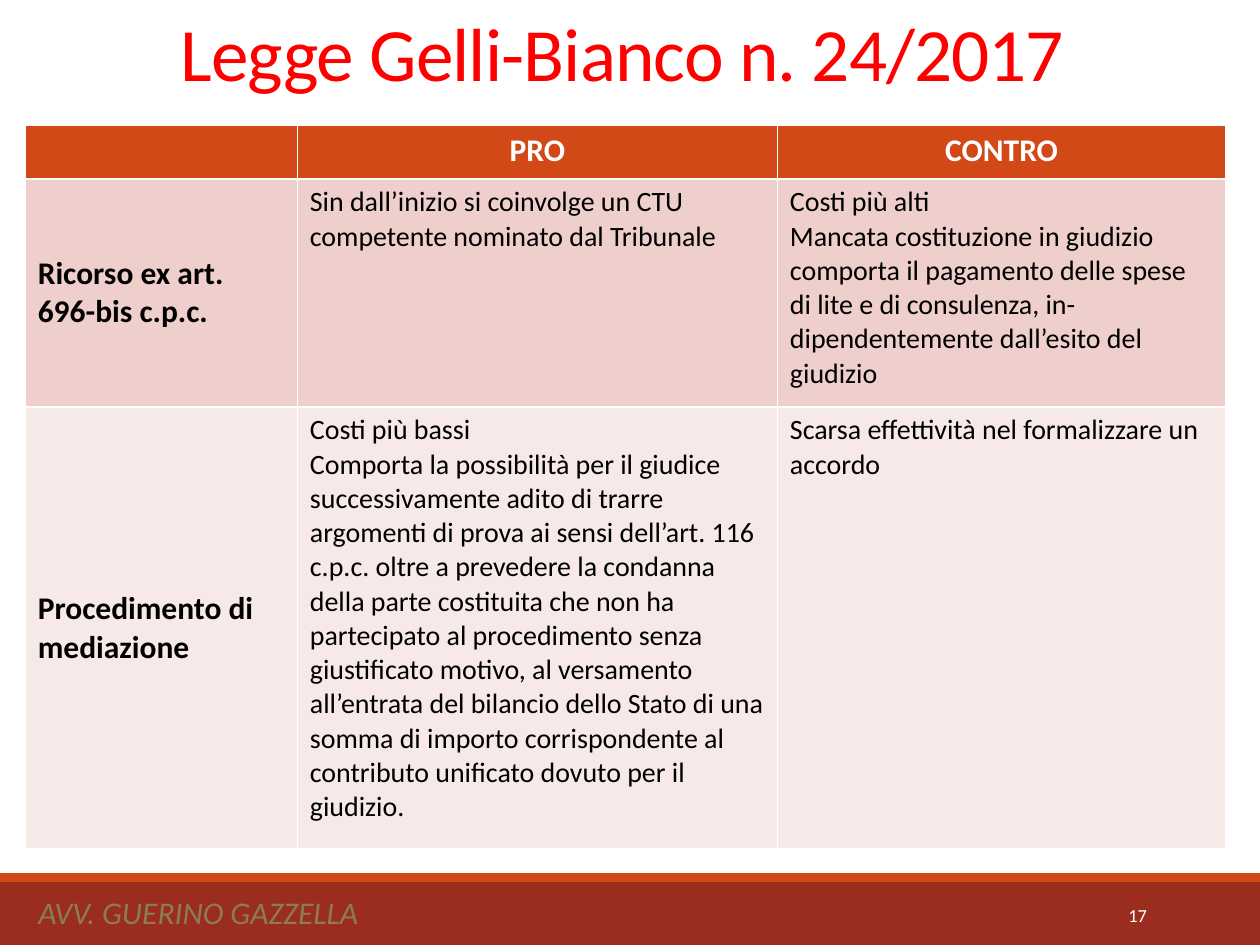
from pptx import Presentation
from pptx.dml.color import RGBColor
from pptx.enum.shapes import MSO_SHAPE
from pptx.enum.text import MSO_ANCHOR, MSO_AUTO_SIZE, PP_ALIGN
from pptx.util import Inches, Pt

RED = RGBColor(0xFF, 0x00, 0x00)
ORANGE = RGBColor(0xD3, 0x48, 0x17)
BRICK = RGBColor(0x9B, 0x2D, 0x1F)
ROSE = RGBColor(0xEF, 0xCF, 0xCC)
PALE = RGBColor(0xF7, 0xE9, 0xE8)
TAUPE = RGBColor(0x8B, 0x7B, 0x57)
WHITE = RGBColor(0xFF, 0xFF, 0xFF)
BLACK = RGBColor(0x00, 0x00, 0x00)

TITLE = "Legge Gelli-Bianco n. 24/2017"
ROWS = [
    ["", "PRO", "CONTRO"],
    ["Ricorso ex art. 696-bis c.p.c.",
     "Sin dall’inizio si coinvolge un CTU competente nominato dal Tribunale",
     "Costi più alti\n"
     "Mancata costituzione in giudizio comporta il pagamento delle spese di lite "
     "e di consulenza, in-dipendentemente dall’esito del giudizio"],
    ["Procedimento di mediazione",
     "Costi più bassi\n"
     "Comporta la possibilità per il giudice successivamente adito di trarre "
     "argomenti di prova ai sensi dell’art. 116 c.p.c. oltre a prevedere la "
     "condanna della parte costituita che non ha partecipato al procedimento "
     "senza giustificato motivo, al versamento all’entrata del bilancio dello "
     "Stato di una somma di importo corrispondente al contributo unificato "
     "dovuto per il giudizio.",
     "Scarsa effettività nel formalizzare un accordo"],
]
COL_WIDTHS = [2.16, 3.81, 3.56]
ROW_HEIGHTS = [0.43, 1.81, 3.51]
ROW_FILLS = [ORANGE, ROSE, PALE]
BANDS = [(7, 0.5, BRICK), (6.93, 0.07, ORANGE)]
FOOTER = [
    ("AVV. GUERINO GAZZELLA", (-0.01, 6.98, 3.17, 0.52), PP_ALIGN.CENTER, 18, TAUPE, True),
    ("17", (8.12, 7.06, 1.08, 0.4), PP_ALIGN.RIGHT, 10.5, WHITE, False),
]


def style(tf, size, color, align=PP_ALIGN.LEFT, bold=False, italic=False):
    for p in tf.paragraphs:
        p.alignment = align
        for r in p.runs:
            r.font.name = "Calibri"
            r.font.size = Pt(size)
            r.font.color.rgb = color
            r.font.bold = bold
            r.font.italic = italic


prs = Presentation()
prs.slide_width, prs.slide_height = Inches(10), Inches(7.5)
slide = prs.slides.add_slide(prs.slide_layouts[5])

for top, height, color in BANDS:
    sp = slide.shapes.add_shape(MSO_SHAPE.RECTANGLE, 0, Inches(top), prs.slide_width, Inches(height))
    sp.shadow.inherit = False
    sp.fill.solid()
    sp.fill.fore_color.rgb = color
    sp.line.fill.background()

title = slide.shapes.title
title.left, title.top, title.width, title.height = map(Inches, (0.84, 0.21, 8.2, 0.61))
tf = title.text_frame
tf.text = TITLE
tf.auto_size = MSO_AUTO_SIZE.NONE
tf.vertical_anchor = MSO_ANCHOR.BOTTOM
style(tf, 43, RED, PP_ALIGN.CENTER)
tf.paragraphs[0].line_spacing = 0.85
tf.paragraphs[0].runs[0].font._element.set("spc", "-50")

for text, box, align, size, color, italic in FOOTER:
    tf = slide.shapes.add_textbox(*map(Inches, box)).text_frame
    tf.word_wrap = True
    tf.vertical_anchor = MSO_ANCHOR.MIDDLE
    tf.text = text
    style(tf, size, color, align, italic=italic)

table = slide.shapes.add_table(
    len(ROWS), len(COL_WIDTHS), Inches(0.2), Inches(0.99),
    Inches(sum(COL_WIDTHS)), Inches(sum(ROW_HEIGHTS))).table
for col, width in zip(table.columns, COL_WIDTHS):
    col.width = Inches(width)
for i, (row, height) in enumerate(zip(table.rows, ROW_HEIGHTS)):
    row.height = Inches(height)
    for j, cell in enumerate(row.cells):
        header, label = i == 0, j == 0
        cell.fill.solid()
        cell.fill.fore_color.rgb = ROW_FILLS[i]
        cell.text_frame.text = ROWS[i][j]
        if label and not header:
            cell.vertical_anchor = MSO_ANCHOR.MIDDLE
        style(cell.text_frame, 18 if header or label else 16,
              WHITE if header else BLACK,
              PP_ALIGN.CENTER if header else PP_ALIGN.LEFT,
              bold=header or label)

prs.save("out.pptx")
